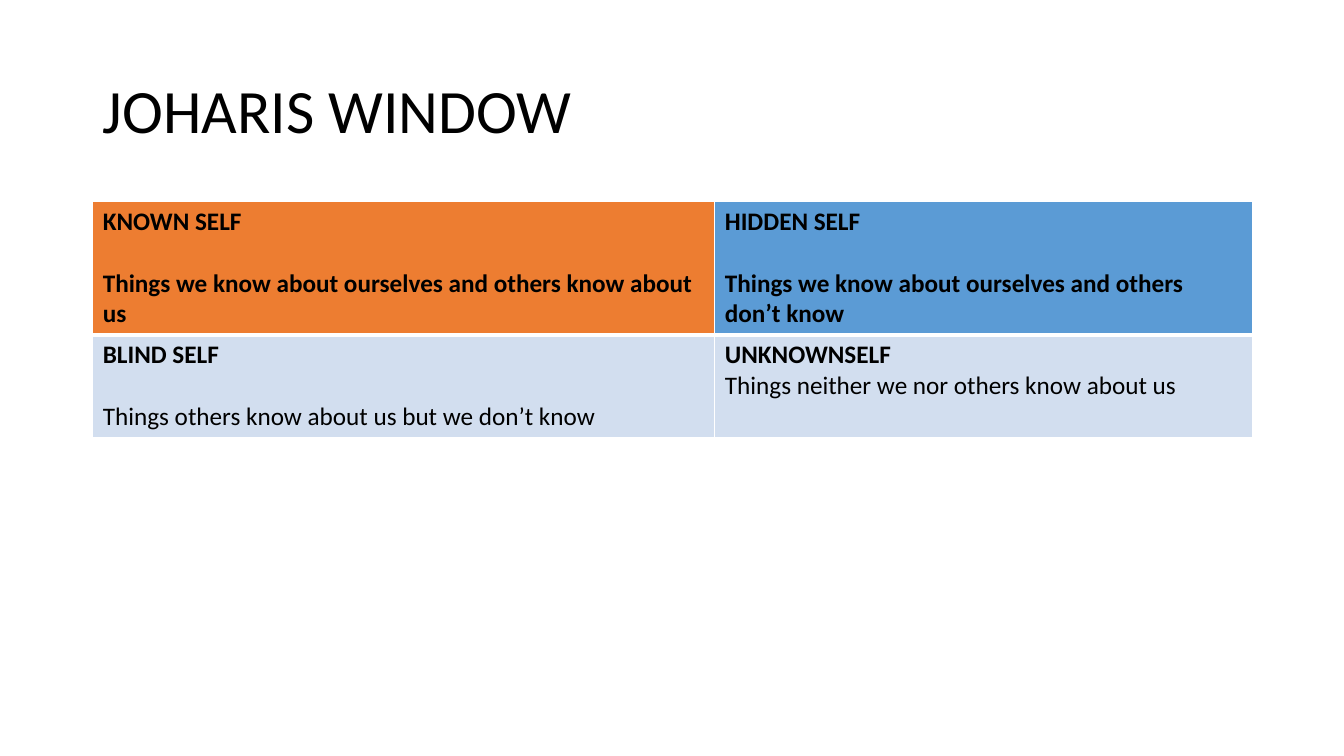
from pptx import Presentation
from pptx.dml.color import RGBColor
from pptx.enum.text import MSO_ANCHOR, PP_ALIGN
from pptx.oxml.ns import qn
from pptx.util import Emu, Pt
from lxml.etree import SubElement

EMU_PER_PX = 9144  # 100 px to the inch
COLORS = {"text": "000000", "known": "ED7D31", "hidden": "5B9BD5",
          "pale": "D2DEEF", "border": "FFFFFF"}

# Each pane: fill, heading, description, bold description, gap in points
PANES = [
    [("known", "KNOWN SELF",
      "Things we know about ourselves and others know about us", True, 22),
     ("hidden", "HIDDEN SELF",
      "Things we know about ourselves and others don’t know", True, 22)],
    [("pale", "BLIND SELF",
      "Things others know about us but we don’t know", False, 22),
     ("pale", "UNKNOWNSELF",
      "Things neither we nor others know about us", False, 0)],
]


def px(length):
    return Emu(length * EMU_PER_PX)


class SlideBuilder:
    font = "Calibri"

    def __init__(self, slide):
        self.slide = slide

    def style(self, paragraph, size, bold=False):
        for run in paragraph.runs:
            run.font.name = self.font
            run.font.size = Pt(size)
            run.font.bold = bold
            run.font.color.rgb = RGBColor.from_string(COLORS["text"])

    def title(self, text, left, top, width, height):
        heading = self.slide.shapes.title
        heading.left, heading.top = px(left), px(top)
        heading.width, heading.height = px(width), px(height)
        frame = heading.text_frame
        frame.text = text
        frame.vertical_anchor = MSO_ANCHOR.MIDDLE
        paragraph = frame.paragraphs[0]
        paragraph.alignment = PP_ALIGN.LEFT
        paragraph.line_spacing = 0.9
        self.style(paragraph, 44)

    def borders(self, cell, widths):
        properties = cell._tc.get_or_add_tcPr()
        for side, width in zip("LRTB", widths):
            line = SubElement(properties, qn(f"a:ln{side}"), w=str(Pt(width)))
            fill = SubElement(line, qn("a:solidFill"))
            SubElement(fill, qn("a:srgbClr"), val=COLORS["border"])

    def pane(self, cell, fill, heading, description, bold, gap):
        cell.text_frame.text = f"{heading}\n{description}"
        name, detail = cell.text_frame.paragraphs
        self.style(name, 18, True)
        self.style(detail, 18, bold)
        detail.space_before = Pt(gap)
        cell.fill.solid()
        cell.fill.fore_color.rgb = RGBColor.from_string(COLORS[fill])

    def window(self, panes, left, top, widths, heights):
        window = self.slide.shapes.add_table(
            len(heights), len(widths), px(left), px(top),
            px(sum(widths)), px(sum(heights))).table
        window.first_row = window.horz_banding = False
        for column, width in zip(window.columns, widths):
            column.width = px(width)
        for row, height in zip(window.rows, heights):
            row.height = px(height)
        for r, row_panes in enumerate(panes):
            # The divider under the first row is thicker
            edges = (1, 1, 1, 3) if r == 0 else (1, 1, 3, 1)
            for c, content in enumerate(row_panes):
                cell = window.cell(r, c)
                self.borders(cell, edges)
                self.pane(cell, *content)


def main():
    deck = Presentation()
    deck.slide_width, deck.slide_height = px(1333), px(750)
    builder = SlideBuilder(deck.slides.add_slide(deck.slide_layouts[5]))

    # Title
    builder.title("JOHARIS WINDOW", 92, 40, 1150, 145)

    # Four panes of the window
    builder.window(PANES, 92, 200, widths=[617, 533], heights=[131, 101])

    deck.save("out.pptx")


if __name__ == "__main__":
    main()
